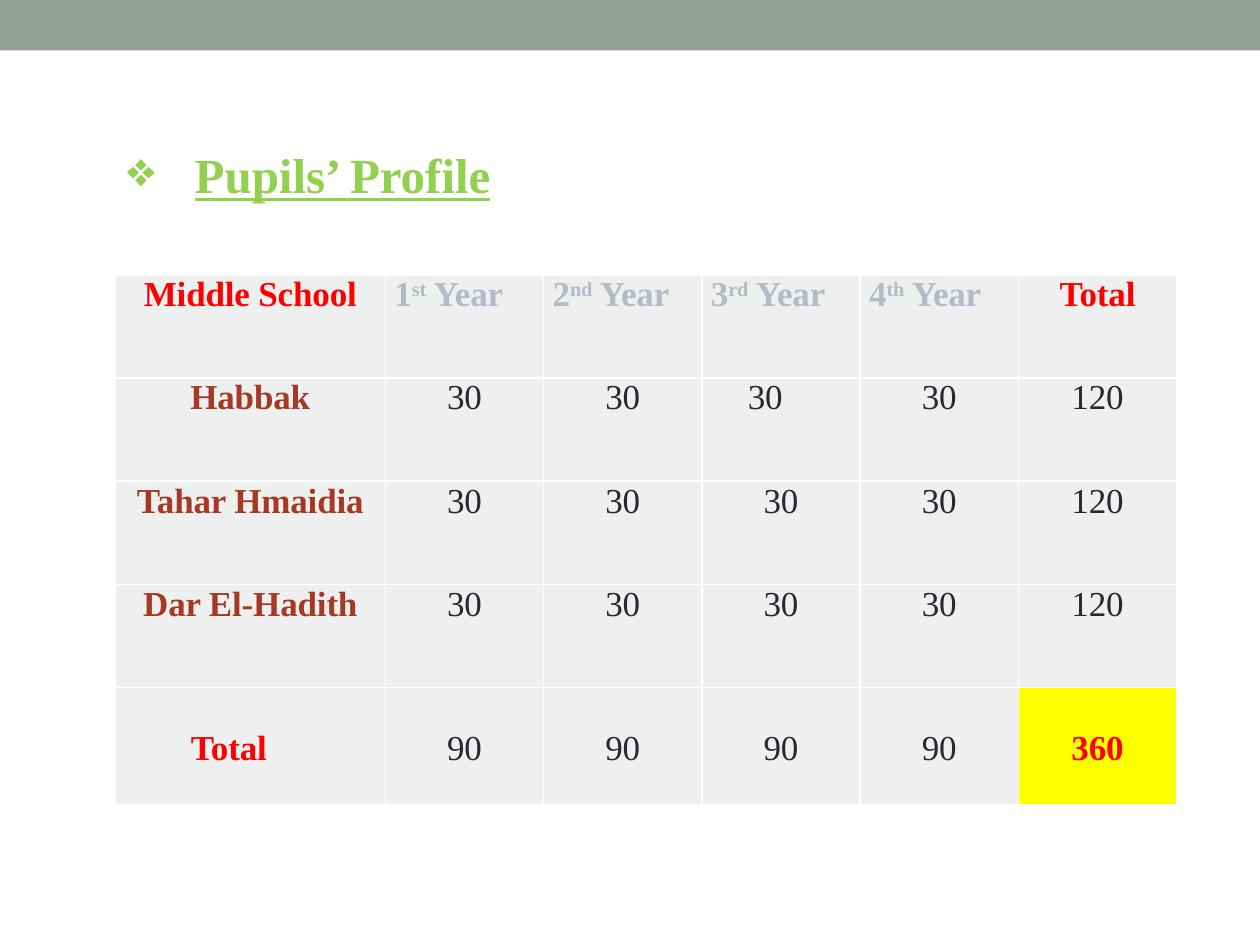
from lxml.etree import SubElement
from pptx import Presentation
from pptx.dml.color import RGBColor as Rgb
from pptx.enum.shapes import MSO_SHAPE as Shape
from pptx.enum.text import MSO_ANCHOR as Anchor, MSO_AUTO_SIZE as AutoSize, PP_ALIGN as Align
from pptx.oxml.ns import qn
from pptx.util import Cm, Pt

TITLE = "Pupils’ Profile"
# Text between carets is superscript.
ROWS = [
    ["Middle School", "1^st^ Year", "2^nd^ Year", "3^rd^ Year", "4^th^ Year", "Total"],
    ["Habbak", "30", "30", "30", "30", "120"],
    ["Tahar Hmaidia", "30", "30", "30", "30", "120"],
    ["Dar El-Hadith", "30", "30", "30", "30", "120"],
    ["Total", "90", "90", "90", "90", "360"],
]
COLUMN_WIDTHS = [5.45] + [3.19] * 5
ROW_HEIGHTS = [2.08] * 4 + [2.36]
LAST_ROW, LAST_COLUMN = len(ROWS) - 1, len(COLUMN_WIDTHS) - 1

THEME = {
    "font": "Times New Roman", "title_size": 28, "cell_size": 20, "line": 22.5,
    "bar": "93A299", "title": "92D050", "cell": "EEF0EF", "highlight": "FFFF00",
    "border": "FFFFFF", "total": "FF0000", "year": "B3BBC6",
    "school": "A53926", "number": "292934",
}


def color(name):
    return Rgb.from_string(THEME[name])


def style(span, size, color_name, bold):
    font = span.font
    font.name, font.size, font.bold = THEME["font"], Pt(THEME[size]), bold
    font.color.rgb = color(color_name)


def add_bar(page, width):
    bar = page.shapes.add_shape(Shape.RECTANGLE, 0, 0, width, Cm(1.02))
    bar.shadow.inherit = False
    bar.fill.solid()
    bar.fill.fore_color.rgb = color("bar")
    bar.line.fill.background()


def add_title(page):
    box = page.shapes.title
    box.left, box.top, box.width, box.height = Cm(2.31), Cm(2.79), Cm(7.93), Cm(1.45)
    frame = box.text_frame
    frame.text = TITLE
    frame.word_wrap, frame.auto_size = True, AutoSize.NONE
    frame.vertical_anchor, frame.margin_right = Anchor.MIDDLE, 0
    para = frame.paragraphs[0]
    para.alignment = Align.LEFT
    style(para.runs[0], "title_size", "title", True)
    para.runs[0].font.underline = True

    properties = para._p.get_or_add_pPr()
    indent = Cm(1.36)
    properties.set("marL", str(indent))
    properties.set("indent", str(-indent))
    bullet_color = SubElement(properties, qn("a:buClr"))
    SubElement(bullet_color, qn("a:srgbClr"), val=THEME["title"])
    SubElement(properties, qn("a:buChar"), char="❖")


def text_color(row, column):
    if (row, column) in {(0, LAST_COLUMN), (LAST_ROW, LAST_COLUMN)} or (
            column == 0 and row in (0, LAST_ROW)):
        return "total"
    if row == 0:
        return "year"
    return "school" if column == 0 else "number"


def add_borders(cell):
    properties = cell._tc.get_or_add_tcPr()
    for side in ("lnL", "lnR", "lnT", "lnB"):
        line = SubElement(properties, qn(f"a:{side}"), w=str(Pt(1)))
        fill = SubElement(line, qn("a:solidFill"))
        SubElement(fill, qn("a:srgbClr"), val=THEME["border"])


def fill_cell(cell, text, row, column):
    add_borders(cell)
    is_grand_total = (row, column) == (LAST_ROW, LAST_COLUMN)
    cell.fill.solid()
    cell.fill.fore_color.rgb = color("highlight" if is_grand_total else "cell")
    cell.margin_left = cell.margin_right = Cm(0.18)
    cell.margin_top = Cm(0.82) if row == LAST_ROW else 0
    cell.margin_bottom = 0

    name = text_color(row, column)
    para = cell.text_frame.paragraphs[0]
    para.alignment = Align.JUSTIFY if name == "year" else Align.CENTER
    para.line_spacing = Pt(THEME["line"])
    for index, piece in enumerate(text.split("^")):
        span = para.add_run()
        span.text = piece
        style(span, "cell_size", name, name != "number")
        properties = span._r.get_or_add_rPr()
        properties.set("spc", "-10")
        if index % 2:
            properties.set("baseline", "30000")


def add_pupil_table(page):
    frame = page.shapes.add_table(
        len(ROWS), len(COLUMN_WIDTHS), Cm(2.32), Cm(5.54),
        Cm(sum(COLUMN_WIDTHS)), Cm(sum(ROW_HEIGHTS)))
    table = frame.table
    for column, width in zip(table.columns, COLUMN_WIDTHS):
        column.width = Cm(width)
    for row, height in zip(table.rows, ROW_HEIGHTS):
        row.height = Cm(height)
    for r, texts in enumerate(ROWS):
        for c, text in enumerate(texts):
            fill_cell(table.cell(r, c), text, r, c)

    # Two entries sit left of their column's centre.
    table.cell(1, 3).margin_right = Cm(0.82)
    total_label = table.cell(LAST_ROW, 0)
    total_label.margin_left = Cm(1.53)
    total_label.text_frame.paragraphs[0].alignment = Align.JUSTIFY


def main():
    deck = Presentation()
    deck.slide_width, deck.slide_height = Cm(25.4), Cm(19.05)
    page = deck.slides.add_slide(deck.slide_layouts.get_by_name("Title Only"))
    add_bar(page, deck.slide_width)
    add_title(page)
    add_pupil_table(page)
    deck.save("out.pptx")


if __name__ == "__main__":
    main()
